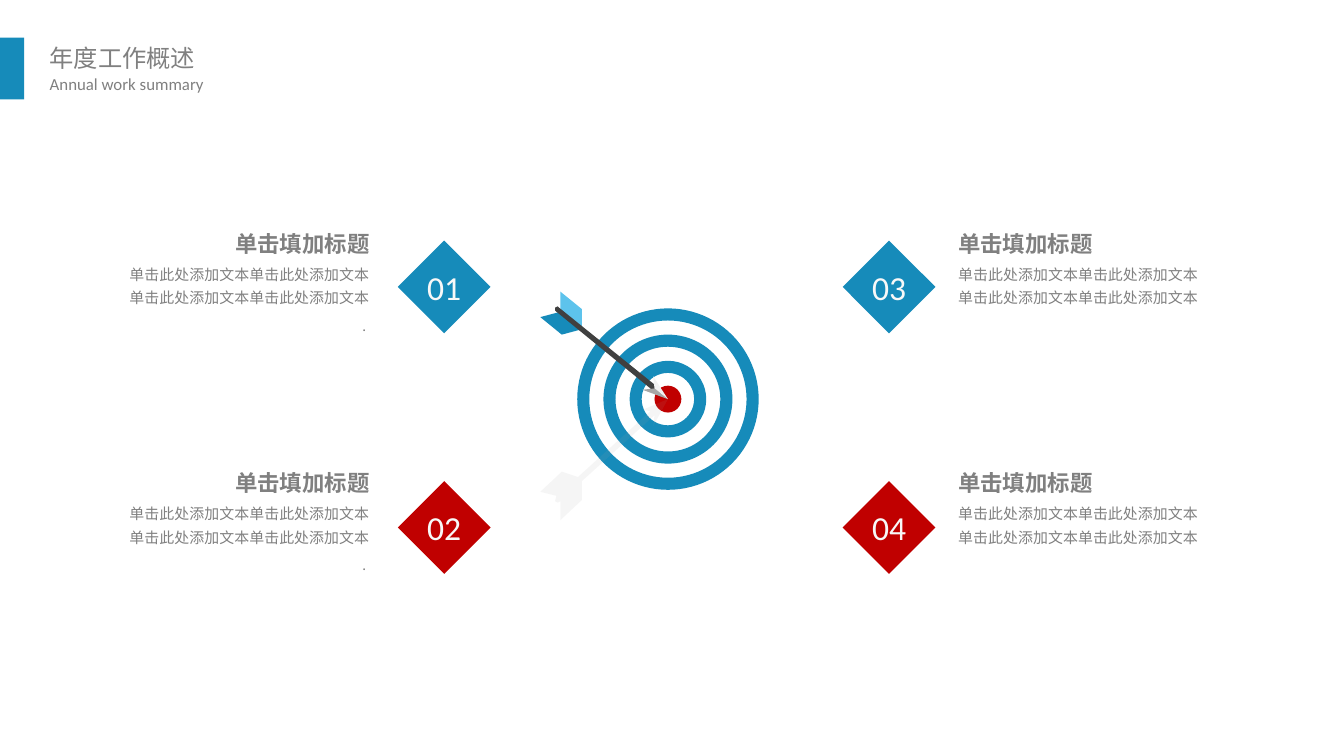
from dataclasses import dataclass
from lxml.etree import SubElement
from pptx import Presentation
from pptx.dml.color import RGBColor as RGB
from pptx.enum.shapes import MSO_SHAPE as Shape
from pptx.enum.text import MSO_ANCHOR as Anchor, MSO_AUTO_SIZE as Auto, PP_ALIGN as Align
from pptx.oxml.ns import qn
from pptx.util import Inches, Pt


@dataclass(frozen=True)
class Theme:
    blue: str = "168BBA"
    sky: str = "5DC3EC"
    red: str = "C00000"
    white: str = "FFFFFF"
    pale: str = "F8F8F8"
    light: str = "F2F2F2"
    silver: str = "A6A6A6"
    gray: str = "808080"
    dim: str = "7C7C7C"
    dark: str = "404040"
    latin: str = "Calibri"
    cjk: str = "Noto Sans CJK SC"
    title: int = 13
    sub: int = 9
    head: int = 12
    body: int = 8
    number: int = 18


def paint(shape, color):
    shape.shadow.inherit = False
    shape.fill.solid()
    shape.fill.fore_color.rgb = RGB.from_string(color)
    shape.line.fill.background()


def write(para, text, size, font, color, bold=False):
    para.text = text
    run = para.runs[0]
    run.font.size = Pt(size)
    run.font.name = font
    run.font.bold = bold
    run.font.color.rgb = RGB.from_string(color)
    SubElement(run._r.get_or_add_rPr(), qn("a:ea")).set("typeface", font)


theme = Theme()
deck = Presentation()
deck.slide_width = Inches(10)
deck.slide_height = Inches(10 * 9 / 16)
slide = deck.slides.add_slide(deck.slide_layouts[6])
shapes = slide.shapes

titles = [
    ("年度工作概述", 0.28, 1.25, 0.29, theme.title, theme.cjk),
    ("Annual work summary", 0.51, 1.31, 0.23, theme.sub, theme.latin),
]
for text, top, width, height, size, font in titles:
    box = shapes.add_textbox(Inches(0.29), Inches(top), Inches(width), Inches(height))
    frame = box.text_frame
    frame.word_wrap = False
    frame.auto_size = Auto.SHAPE_TO_FIT_TEXT
    frame.margin_left = frame.margin_right = Inches(0.08)
    frame.margin_top = frame.margin_bottom = Inches(0.04)
    write(frame.paragraphs[0], text, size, font, theme.gray)

mark = shapes.add_shape(Shape.RECTANGLE, 0, Inches(0.28), Inches(0.18), Inches(0.46))
paint(mark, theme.blue)

body = "单击此处添加文本单击此处添加文本"
lines = [
    ("单击填加标题", theme.head, theme.cjk, theme.gray, True, 1.2, 3),
    (body, theme.body, theme.cjk, theme.gray, False, 1.2, 3),
    (body, theme.body, theme.cjk, theme.gray, False, 1.3, 0),
    (". ", theme.body, theme.latin, theme.dim, False, 1.2, 3),
]
sides = [(0.55, 0.82, Align.RIGHT, lines), (7.13, 0.62, Align.LEFT, lines[:3])]
for left, height, align, rows in sides:
    for top in (1.67, 3.45):
        box = shapes.add_textbox(Inches(left), Inches(top), Inches(2.2), Inches(height))
        frame = box.text_frame
        frame.word_wrap = True
        frame.auto_size = Auto.SHAPE_TO_FIT_TEXT
        frame.margin_left = frame.margin_right = 0
        frame.margin_top = frame.margin_bottom = 0
        for i, (text, size, font, color, bold, space, gap) in enumerate(rows):
            para = frame.add_paragraph() if i else frame.paragraphs[0]
            write(para, text, size, font, color, bold)
            para.alignment = align
            para.line_spacing = space
            para.space_before = Pt(gap)

mid_x, mid_y = 4.97, 2.97
band = 0.09
discs = [
    (Shape.OVAL, 1.34, theme.white),
    (Shape.OVAL, 0.2, theme.red),
    (Shape.DONUT, 1.35, theme.blue),
    (Shape.DONUT, 0.96, theme.blue),
    (Shape.DONUT, 0.57, theme.blue),
]
for kind, size, color in discs:
    disc = shapes.add_shape(kind, Inches(mid_x - size / 2), Inches(mid_y - size / 2),
                            Inches(size), Inches(size))
    if kind == Shape.DONUT:
        disc.adjustments[0] = band / size
    paint(disc, color)

parts = [
    (theme.blue, [(4.33, 2.45), (4.18, 2.49), (4.02, 2.36), (4.17, 2.32)]),
    (theme.sky, [(4.33, 2.45), (4.33, 2.3), (4.17, 2.17), (4.17, 2.32)]),
    (theme.dark, [(4.91, 2.95), (4.9, 2.94), (4.14, 2.32), (4.13, 2.31), (4.13, 2.29),
                  (4.15, 2.28), (4.16, 2.29), (4.93, 2.91), (4.94, 2.92), (4.93, 2.94)]),
    (theme.silver, [(4.78, 2.9), (4.97, 2.97), (4.87, 2.89)]),
    (theme.light, [(4.87, 2.89), (4.97, 2.97), (4.86, 2.8)]),
    (theme.silver, [(4.97, 2.97), (4.86, 3.17), (4.87, 3.09), (4.33, 3.58), (4.33, 3.72),
                    (4.17, 3.87), (4.17, 3.73), (4.15, 3.74), (4.13, 3.73), (4.14, 3.69),
                    (4.02, 3.66), (4.18, 3.51), (4.3, 3.55), (4.84, 3.06), (4.78, 3.05)]),
]
for color, points in parts:
    spots = [(Inches(x), Inches(y)) for x, y in points]
    pen = shapes.build_freeform(*spots[0])
    pen.add_line_segments(spots[1:], close=True)
    shade = pen.convert_to_shape()
    paint(shade, color)
tint = shade._element.spPr.find(qn("a:solidFill")).find(qn("a:srgbClr"))
SubElement(tint, qn("a:alpha")).set("val", "10000")

count = 0
for left in (2.96, 6.27):
    for top, color in ((1.79, theme.blue), (3.58, theme.red)):
        count += 1
        gem = shapes.add_shape(Shape.DIAMOND, Inches(left), Inches(top), Inches(0.69), Inches(0.69))
        paint(gem, color)
        frame = gem.text_frame
        frame.margin_left = frame.margin_right = 0
        frame.margin_top = frame.margin_bottom = 0
        frame.vertical_anchor = Anchor.MIDDLE
        write(frame.paragraphs[0], f"{count:02}", theme.number, theme.latin, theme.pale)
        frame.paragraphs[0].alignment = Align.CENTER

deck.save("out.pptx")
